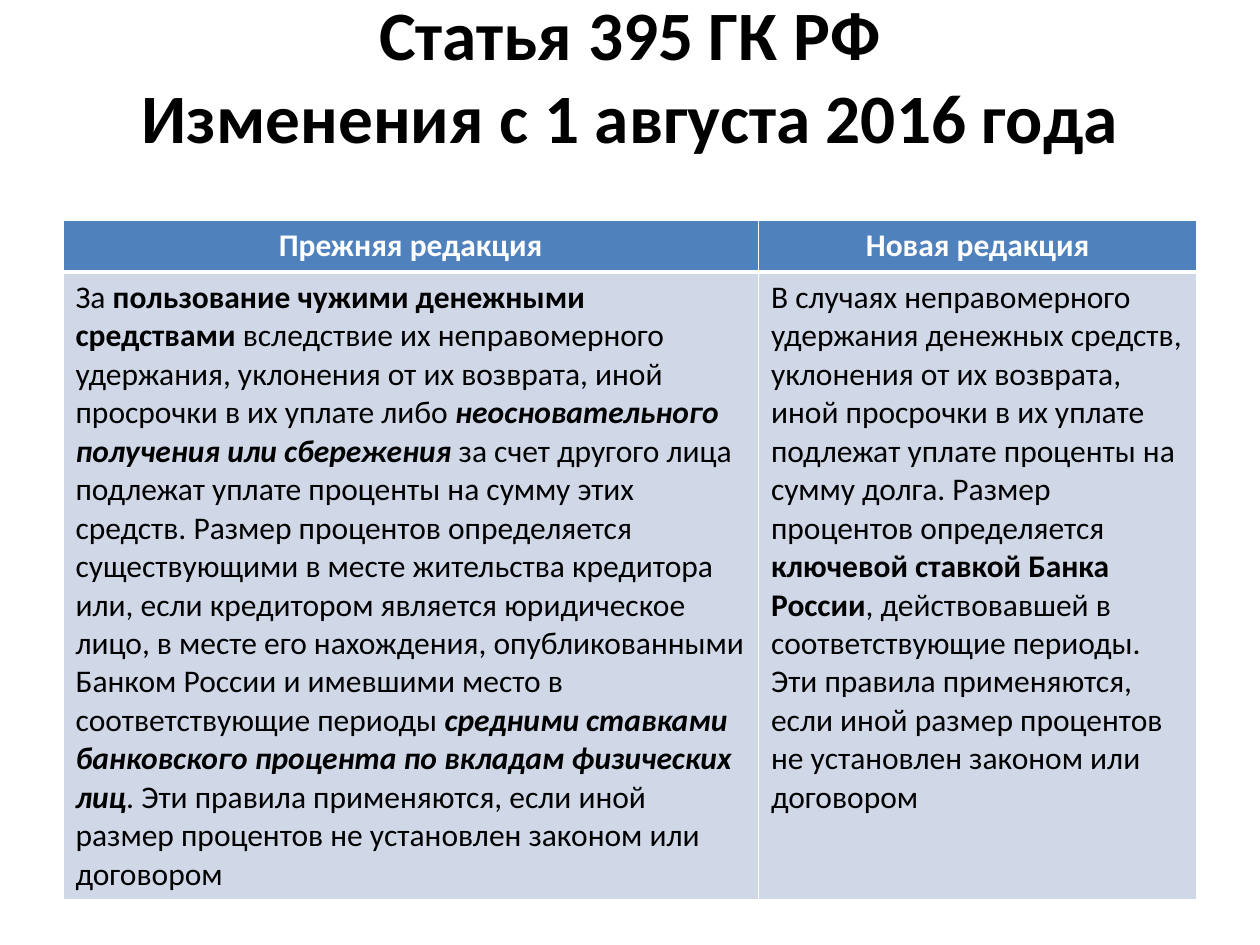
from lxml.etree import SubElement
from pptx import Presentation
from pptx.dml.color import RGBColor
from pptx.enum.text import MSO_ANCHOR, MSO_AUTO_SIZE, PP_ALIGN
from pptx.oxml.ns import qn
from pptx.util import Inches, Pt

BLACK = RGBColor(0x00, 0x00, 0x00)
WHITE = RGBColor(0xFF, 0xFF, 0xFF)
HEADER_BLUE = RGBColor(0x4F, 0x81, 0xBD)
BODY_BLUE = RGBColor(0xD0, 0xD8, 0xE8)
FONT = "Calibri"
PLAIN, BOLD, BOLD_ITALIC = (False, False), (True, False), (True, True)

HEADERS = ["Прежняя редакция", "Новая редакция"]
OLD_WORDING = [
    ("За ", PLAIN),
    ("пользование чужими денежными средствами", BOLD),
    (" вследствие их неправомерного удержания, уклонения от их возврата, "
     "иной просрочки в их уплате либо ", PLAIN),
    ("неосновательного получения или сбережения", BOLD_ITALIC),
    (" за счет другого лица подлежат уплате проценты на сумму этих средств. "
     "Размер процентов определяется существующими в месте жительства кредитора "
     "или, если кредитором является юридическое лицо, в месте его нахождения, "
     "опубликованными Банком России и имевшими место в соответствующие периоды ", PLAIN),
    ("средними ставками банковского процента по вкладам физических лиц", BOLD_ITALIC),
    (". Эти правила применяются, если иной размер процентов "
     "не установлен законом или договором", PLAIN),
]
NEW_WORDING = [
    ("В случаях неправомерного удержания денежных средств, уклонения от их "
     "возврата, иной просрочки в их уплате подлежат уплате проценты на сумму "
     "долга. Размер процентов определяется ", PLAIN),
    ("ключевой ставкой Банка России", BOLD),
    (", действовавшей в соответствующие периоды. Эти правила применяются, "
     "если иной размер процентов не установлен законом или договором", PLAIN),
]


def style_span(span, size, color, bold, italic=False):
    font = span.font
    font.name, font.size = FONT, Pt(size)
    font.bold, font.italic = bold, italic
    font.color.rgb = color


def set_borders(cell, widths):
    """Draw white cell borders; widths maps a side (L, R, T, B) to points."""
    properties = cell._tc.get_or_add_tcPr()
    for position, (side, width) in enumerate(widths.items()):
        line = SubElement(properties, qn(f"a:ln{side}"), w=str(Pt(width)))
        fill = SubElement(line, qn("a:solidFill"))
        SubElement(fill, qn("a:srgbClr"), val=str(WHITE))
        properties.insert(position, line)


deck = Presentation()
deck.slide_width, deck.slide_height = Inches(10), Inches(7.5)
page = deck.slides.add_slide(deck.slide_layouts[5])
margin = int(deck.slide_width * 0.05)
content_width = deck.slide_width - 2 * margin

title = page.shapes.title
title.left, title.top = margin, Inches(0.3)
title.width, title.height = content_width, Inches(1.25)
frame = title.text_frame
frame.text = "Статья 395 ГК РФ\vИзменения с 1 августа 2016 года"
frame.word_wrap = True
frame.auto_size = MSO_AUTO_SIZE.NONE
frame.vertical_anchor = MSO_ANCHOR.MIDDLE
frame.margin_bottom = Inches(0.72)
frame.paragraphs[0].alignment = PP_ALIGN.CENTER
for span in frame.paragraphs[0].runs:
    style_span(span, 39.6, BLACK, True)

table = page.shapes.add_table(
    2, 2, margin, Inches(1.75), content_width, Inches(5.31)).table
for column, width in zip(table.columns, (5.52, 3.48)):
    column.width = Inches(width)
for row, height in zip(table.rows, (0.41, 4.9)):
    row.height = Inches(height)

for index, (header, wording) in enumerate(zip(HEADERS, (OLD_WORDING, NEW_WORDING))):
    header_cell, body_cell = table.cell(0, index), table.cell(1, index)

    header_cell.fill.solid()
    header_cell.fill.fore_color.rgb = HEADER_BLUE
    header_cell.text_frame.text = header
    para = header_cell.text_frame.paragraphs[0]
    para.alignment = PP_ALIGN.CENTER
    style_span(para.runs[0], 18, WHITE, True)
    set_borders(header_cell, {"L": 1, "R": 1, "T": 1, "B": 3})

    body_cell.fill.solid()
    body_cell.fill.fore_color.rgb = BODY_BLUE
    para = body_cell.text_frame.paragraphs[0]
    for text, (bold, italic) in wording:
        span = para.add_run()
        span.text = text
        style_span(span, 18, BLACK, bold, italic)
    set_borders(body_cell, {"L": 1, "R": 1, "T": 3, "B": 1})

deck.save("out.pptx")
